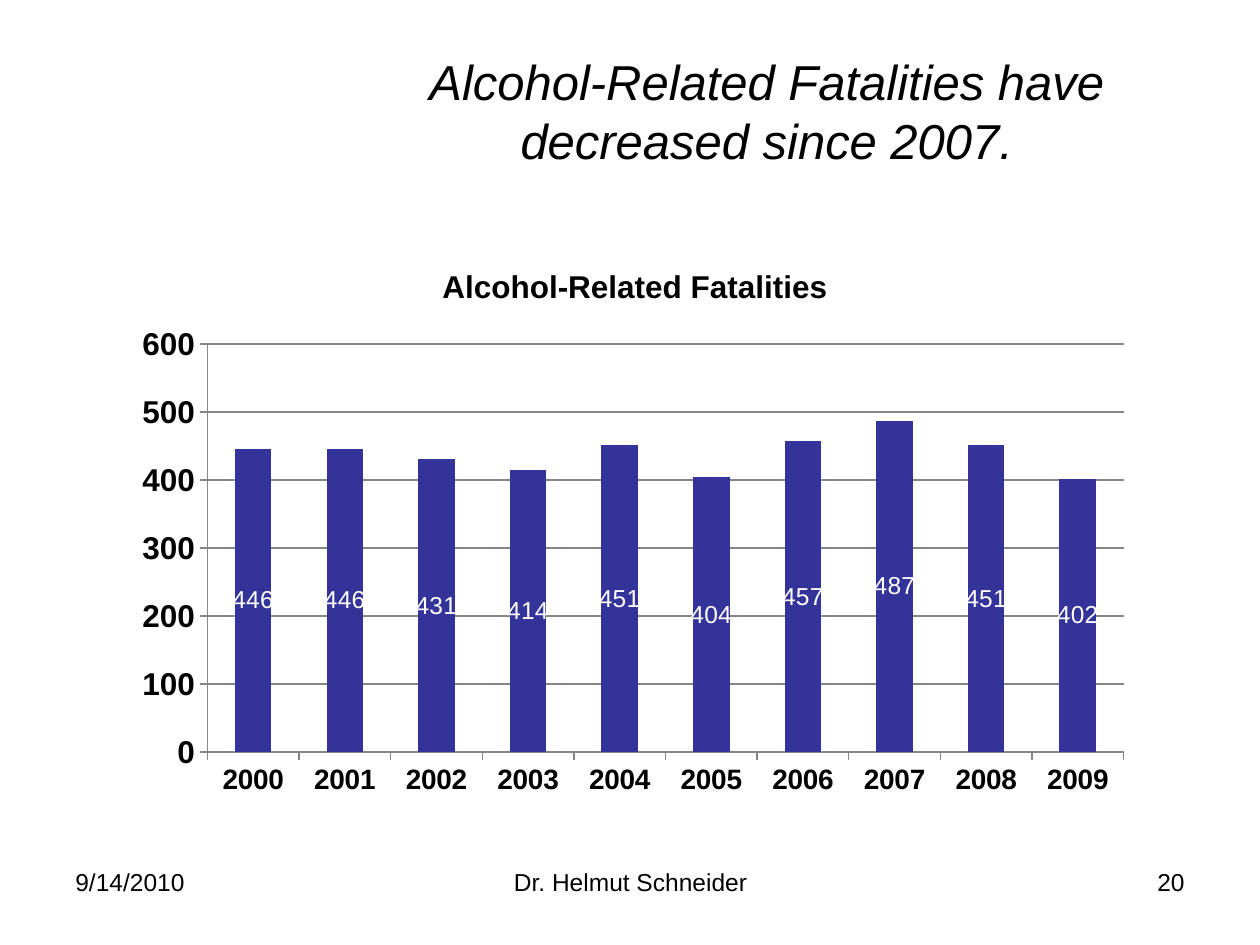
from typing import NamedTuple

from lxml import etree
from pptx import Presentation
from pptx.chart.data import CategoryChartData
from pptx.dml.color import RGBColor
from pptx.enum import chart as charts, text
from pptx.oxml import ns
from pptx.util import Inches, Pt

FONT = "Arial"
BLACK, WHITE, NAVY, GRAY = "000000", "FFFFFF", "333399", "868686"
FATALITIES = {
    "2000": 446, "2001": 446, "2002": 431, "2003": 414, "2004": 451,
    "2005": 404, "2006": 457, "2007": 487, "2008": 451, "2009": 402,
}


class FooterItem(NamedTuple):
    words: str
    left: float
    width: float
    align: text.PP_ALIGN


FOOTER = [
    FooterItem("9/14/2010", 0.5, 2.33, text.PP_ALIGN.LEFT),
    FooterItem("Dr. Helmut Schneider", 3.42, 3.17, text.PP_ALIGN.CENTER),
    FooterItem("20", 7.17, 2.33, text.PP_ALIGN.RIGHT),
]


def rgb(value: str) -> RGBColor:
    return RGBColor.from_string(value)


def style_font(font, size: float, color: str = BLACK, bold: bool = False, italic: bool = False) -> None:
    font.name, font.size, font.bold, font.italic = FONT, Pt(size), bold, italic
    font.color.rgb = rgb(color)


def add_text(slide, words: str, left: float, top: float, width: float, height: float, *,
             size: float, align: text.PP_ALIGN, anchor=text.MSO_ANCHOR.TOP, italic: bool = False) -> None:
    frame = slide.shapes.add_textbox(Inches(left), Inches(top), Inches(width), Inches(height)).text_frame
    frame.word_wrap = True
    frame.vertical_anchor = anchor
    paragraph = frame.paragraphs[0]
    paragraph.alignment = align
    run = paragraph.add_run()
    run.text = words
    style_font(run.font, size, italic=italic)


def style_line(line) -> None:
    line.color.rgb = rgb(GRAY)
    line.width = Pt(0.75)


def style_axis(axis, size: float) -> None:
    axis.major_tick_mark = charts.XL_TICK_MARK.OUTSIDE
    axis.minor_tick_mark = charts.XL_TICK_MARK.NONE
    style_font(axis.tick_labels.font, size, bold=True)
    style_line(axis.format.line)


def place_plot(chart, x: float, y: float, w: float, h: float) -> None:
    plot_area = chart.plots[0]._element.getparent()
    for old in plot_area.findall(ns.qn("c:layout")):
        plot_area.remove(old)
    layout = etree.Element(ns.qn("c:layout"))
    manual = etree.SubElement(layout, ns.qn("c:manualLayout"))
    settings = {"layoutTarget": "inner", "xMode": "edge", "yMode": "edge", "x": x, "y": y, "w": w, "h": h}
    for tag, value in settings.items():
        etree.SubElement(manual, ns.qn(f"c:{tag}")).set("val", str(value))
    plot_area.insert(0, layout)


def add_fatalities_chart(slide) -> None:
    data = CategoryChartData()
    data.categories = list(FATALITIES)
    data.add_series("Series 1", list(FATALITIES.values()))
    chart = slide.shapes.add_chart(charts.XL_CHART_TYPE.COLUMN_STACKED, Inches(1), Inches(1.92),
                                   Inches(8.08), Inches(4.5), data).chart
    style_font(chart.font, 10)
    chart.has_legend = False
    chart.has_title = True
    heading = chart.chart_title.text_frame
    heading.text = "Alcohol-Related Fatalities"
    style_font(heading.paragraphs[0].runs[0].font, 18, bold=True)

    style_axis(chart.category_axis, 16)
    style_axis(chart.value_axis, 18)
    chart.value_axis.minimum_scale = 0
    chart.value_axis.maximum_scale = 600
    chart.value_axis.major_unit = 100
    chart.value_axis.has_major_gridlines = True
    style_line(chart.value_axis.major_gridlines.format.line)

    plot = chart.plots[0]
    plot.gap_width, plot.overlap, plot.vary_by_categories = 150, 100, False
    bars = plot.series[0]
    bars.format.fill.solid()
    bars.format.fill.fore_color.rgb = rgb(NAVY)
    bars.data_labels.show_value = True
    bars.data_labels.position = charts.XL_LABEL_POSITION.CENTER
    style_font(bars.data_labels.font, 14, WHITE)
    place_plot(chart, 0.08, 0.18, 0.9, 0.72)


def main() -> None:
    deck = Presentation()
    deck.slide_width, deck.slide_height = Inches(10), Inches(7.5)
    slide = deck.slides.add_slide(deck.slide_layouts[6])
    add_text(slide, "Alcohol-Related Fatalities have decreased since 2007.", 2.67, 0.25, 6.83, 1.25,
             size=28, align=text.PP_ALIGN.CENTER, anchor=text.MSO_ANCHOR.MIDDLE, italic=True)
    for item in FOOTER:
        add_text(slide, item.words, item.left, 6.83, item.width, 0.52, size=14, align=item.align)
    add_fatalities_chart(slide)
    deck.save("out.pptx")


if __name__ == "__main__":
    main()
